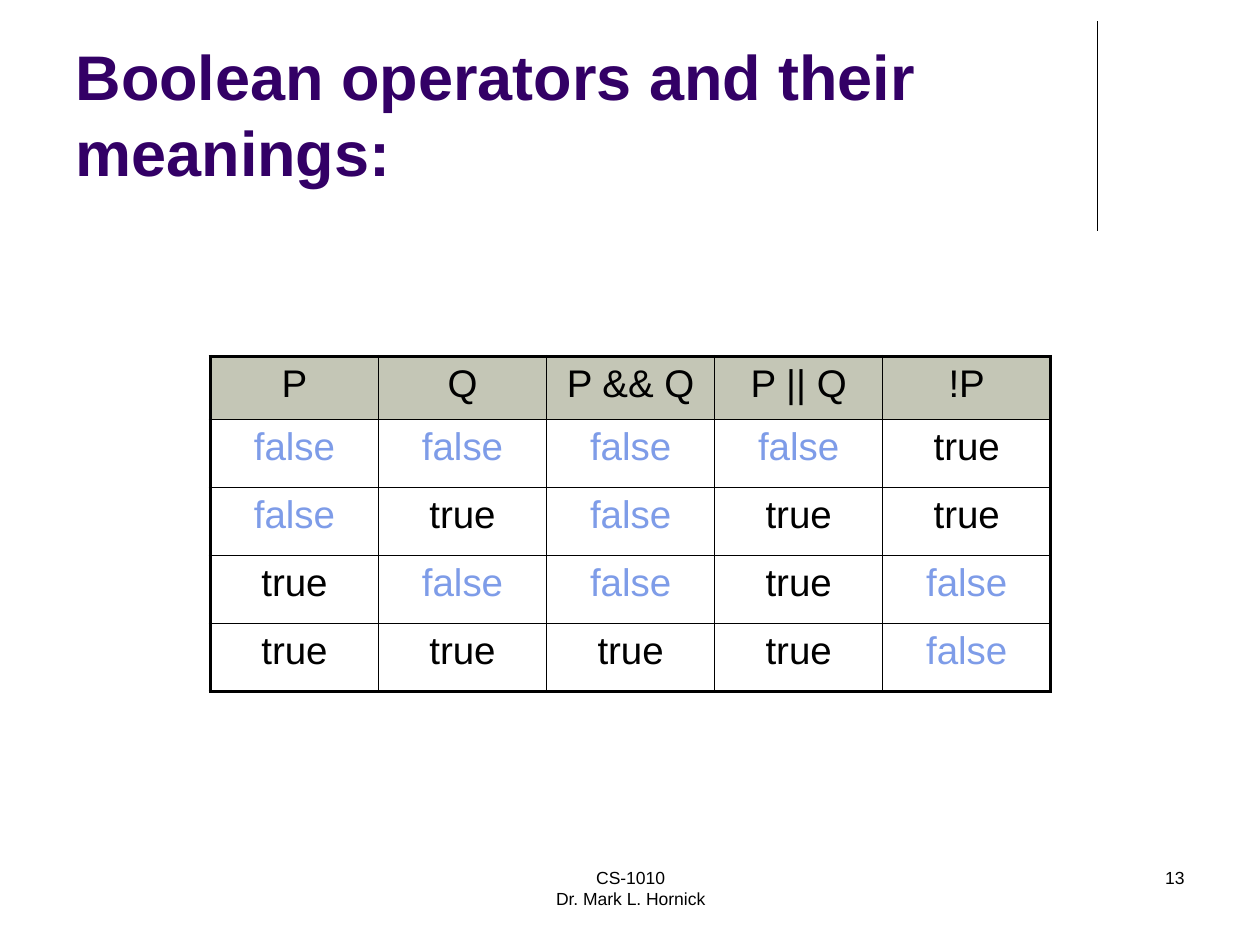
from lxml.etree import SubElement
from pptx import Presentation
from pptx.dml.color import RGBColor
from pptx.enum.shapes import MSO_CONNECTOR
from pptx.enum.text import MSO_ANCHOR, MSO_AUTO_SIZE, PP_ALIGN
from pptx.oxml.ns import qn
from pptx.util import Inches, Pt

COLORS = {
    "text": "000000",
    "title": "330066",
    "header": "C4C6B6",
    "false": "7E9CE8",
}
TRUTH_TABLE = [
    ["P", "Q", "P && Q", "P || Q", "!P"],
    ["false", "false", "false", "false", "true"],
    ["false", "true", "false", "true", "true"],
    ["true", "false", "false", "true", "false"],
    ["true", "true", "true", "true", "false"],
]
INNER_BORDER, OUTER_BORDER = 1, 2.25


def color(name):
    return RGBColor.from_string(COLORS[name])


def format_text(paragraph, size, color_name="text", align=PP_ALIGN.LEFT, bold=False):
    paragraph.alignment = align
    font = paragraph.font
    font.name = "Arial"
    font.size = Pt(size)
    font.bold = bold
    font.color.rgb = color(color_name)


def add_divider(slide):
    x = Inches(8.71)
    divider = slide.shapes.add_connector(
        MSO_CONNECTOR.STRAIGHT, x, Inches(0.17), x, Inches(1.83))
    divider.line.color.rgb = color("text")
    divider.line.width = Pt(0.75)
    SubElement(divider._element.spPr, qn("a:effectLst"))


def set_title(slide, text):
    title = slide.shapes.title
    title.left, title.top = Inches(0.5), Inches(0.13)
    title.width, title.height = Inches(8.25), Inches(1.42)
    frame = title.text_frame
    frame.text = text
    frame.word_wrap = True
    frame.auto_size = MSO_AUTO_SIZE.NONE
    frame.vertical_anchor = MSO_ANCHOR.BOTTOM
    format_text(frame.paragraphs[0], 36, "title", bold=True)


def add_footer(slide, text, left, width, align):
    footer = slide.shapes.add_textbox(
        Inches(left), Inches(6.83), Inches(width), Inches(0.5))
    frame = footer.text_frame
    frame.word_wrap = True
    frame.text = text
    format_text(frame.paragraphs[0], 10, align=align)


def set_borders(cell, widths):
    properties = cell._tc.get_or_add_tcPr()
    for side, width in widths.items():
        border = SubElement(properties, qn(f"a:ln{side}"), w=str(Pt(width)))
        fill = SubElement(border, qn("a:solidFill"))
        SubElement(fill, qn("a:srgbClr"), val=COLORS["text"])


def add_truth_table(slide, rows):
    last_row, last_column = len(rows) - 1, len(rows[0]) - 1
    table = slide.shapes.add_table(
        len(rows), len(rows[0]),
        Inches(1.67), Inches(2.83), Inches(6.67), Inches(2.66)).table
    table.first_row = table.horz_banding = False
    for r, values in enumerate(rows):
        table.rows[r].height = Inches(0.54 if r else 0.5)
        for c, value in enumerate(values):
            cell = table.cell(r, c)
            cell.text = value
            format_text(cell.text_frame.paragraphs[0], 22,
                        "false" if value == "false" else "text", PP_ALIGN.CENTER)
            outer = {"L": c == 0, "R": c == last_column,
                     "T": r == 0, "B": r == last_row}
            set_borders(cell, {side: OUTER_BORDER if is_outer else INNER_BORDER
                               for side, is_outer in outer.items()})
            if r == 0:
                cell.fill.solid()
                cell.fill.fore_color.rgb = color("header")
            else:
                cell.fill.background()


def main():
    presentation = Presentation()
    presentation.slide_width, presentation.slide_height = Inches(10), Inches(7.5)
    slide = presentation.slides.add_slide(presentation.slide_layouts[5])
    add_divider(slide)
    add_footer(slide, "CS-1010\vDr. Mark L. Hornick", 3.42, 3.17, PP_ALIGN.CENTER)
    add_footer(slide, "13", 7.17, 2.33, PP_ALIGN.RIGHT)
    set_title(slide, "Boolean operators and their meanings:")
    add_truth_table(slide, TRUTH_TABLE)
    presentation.save("out.pptx")


if __name__ == "__main__":
    main()
